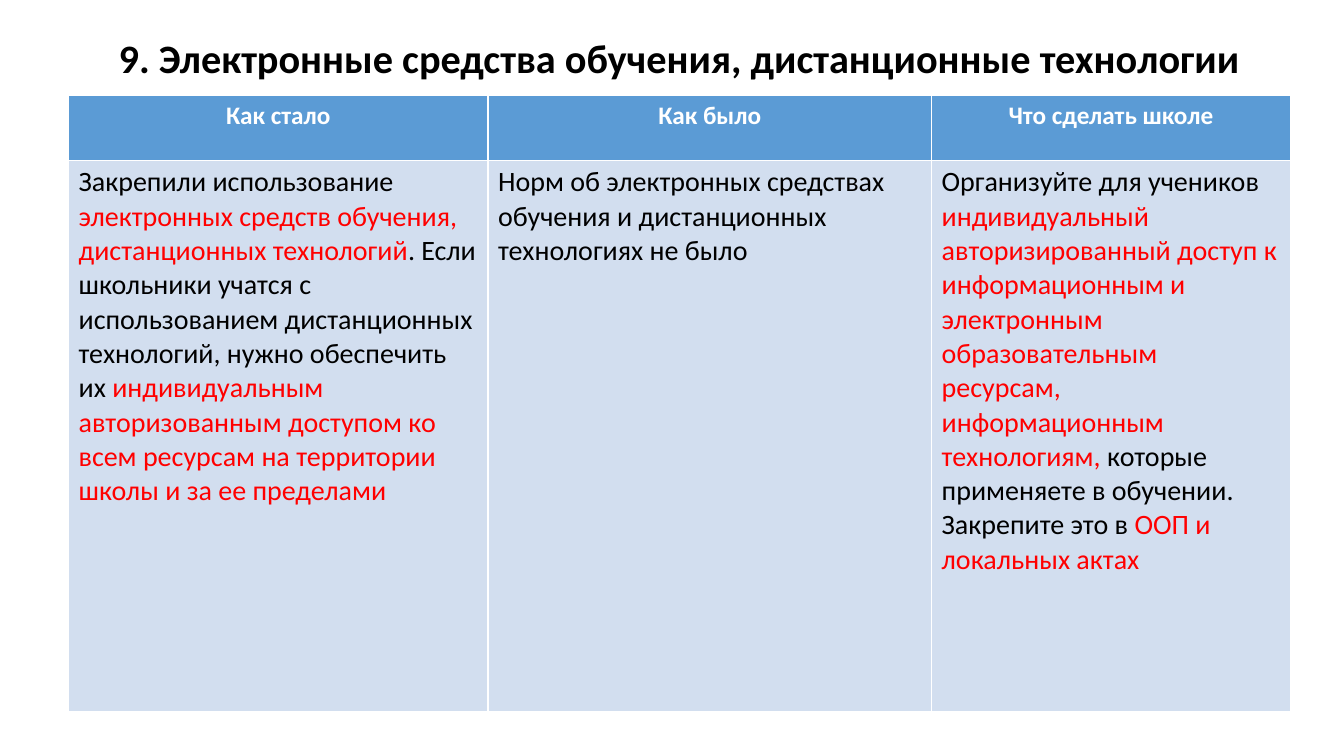
from pptx import Presentation
from pptx.dml.color import RGBColor
from pptx.enum.text import MSO_ANCHOR, PP_ALIGN
from pptx.util import Inches, Pt

LEFT, CENTER = PP_ALIGN.LEFT, PP_ALIGN.CENTER
MIDDLE = MSO_ANCHOR.MIDDLE

BLACK, WHITE, RED = "000000", "FFFFFF", "FF0000"
BLUE, PALE = "5B9BD5", "D2DEEF"

TITLE = "9. Электронные средства обучения, дистанционные технологии"
HEADS = ["Как стало", "Как было", "Что сделать школе"]
BODY = [
    [
        ("Закрепили использование ", BLACK),
        ("электронных средств обучения, дистанционных технологий", RED),
        (". Если школьники учатся с использованием дистанционных "
         "технологий, нужно обеспечить их ", BLACK),
        ("индивидуальным авторизованным доступом ко всем ресурсам "
         "на территории школы и за ее пределами", RED),
    ],
    [
        ("Норм об электронных средствах обучения и дистанционных "
         "технологиях не было", BLACK),
    ],
    [
        ("Организуйте для учеников ", BLACK),
        ("индивидуальный авторизированный доступ к информационным и "
         "электронным образовательным ресурсам, информационным "
         "технологиям, ", RED),
        ("которые применяете в обучении. Закрепите это в ", BLACK),
        ("ООП и локальных актах", RED),
    ],
]
WIDTHS = [4.16, 4.4, 3.56]
HEIGHTS = [0.64, 5.47]


def color(code):
    return RGBColor.from_string(code)


def write(frame, runs, size, bold=False, align=LEFT, spacing=None):
    frame.word_wrap = True
    para = frame.paragraphs[0]
    para.alignment = align
    if spacing:
        para.line_spacing = spacing
    for text, code in runs:
        run = para.add_run()
        run.text = text
        run.font.name = "Calibri"
        run.font.size = Pt(size)
        run.font.bold = bold
        run.font.color.rgb = color(code)


def fill(cell, code, runs, **style):
    cell.fill.solid()
    cell.fill.fore_color.rgb = color(code)
    write(cell.text_frame, runs, **style)


def main():
    deck = Presentation()
    deck.slide_width, deck.slide_height = Inches(13.33), Inches(7.5)
    slide = deck.slides.add_slide(deck.slide_layouts[6])

    box = slide.shapes.add_textbox(
        Inches(0.99), Inches(0.08), Inches(11.5), Inches(1.04))
    box.text_frame.vertical_anchor = MIDDLE
    write(box.text_frame, [(TITLE, BLACK)], size=28.8, bold=True,
          align=CENTER, spacing=0.9)

    table = slide.shapes.add_table(
        len(HEIGHTS), len(WIDTHS), Inches(0.68), Inches(0.95),
        Inches(sum(WIDTHS)), Inches(sum(HEIGHTS))).table
    for row, high in zip(table.rows, HEIGHTS):
        row.height = Inches(high)
    for col, (wide, head, runs) in enumerate(zip(WIDTHS, HEADS, BODY)):
        table.columns[col].width = Inches(wide)
        fill(table.cell(0, col), BLUE, [(head, WHITE)], size=18,
             bold=True, align=CENTER)
        fill(table.cell(1, col), PALE, runs, size=20)

    deck.save("out.pptx")


if __name__ == "__main__":
    main()
